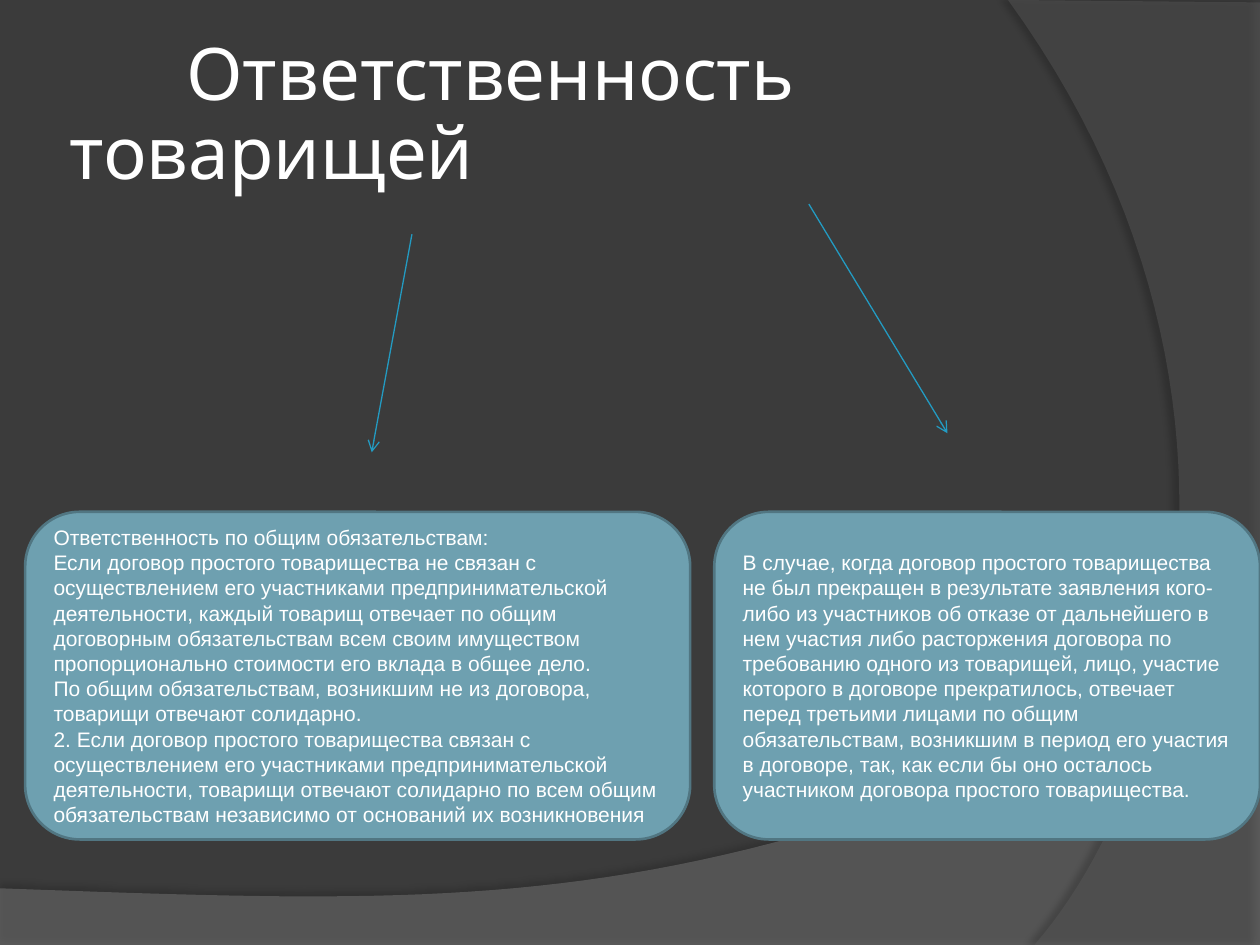
from dataclasses import dataclass

from lxml.etree import SubElement
from pptx import Presentation
from pptx.dml.color import RGBColor
from pptx.enum.shapes import MSO_CONNECTOR, MSO_SHAPE
from pptx.enum.text import MSO_ANCHOR, PP_ALIGN
from pptx.oxml.ns import qn
from pptx.util import Pt


@dataclass(frozen=True)
class Theme:
    background: str = "3B3B3B"
    bottom_wave: str = "7F7F7F"
    right_wave: str = "5E5E5E"
    shadow: str = "000000"
    card: str = "6EA0B0"
    card_border: str = "517682"
    arrow: str = "239BC2"
    text: str = "FFFFFF"
    title_font: str = "Karla"
    body_font: str = "Arial"
    title_size: float = 41.4
    body_size: float = 12


@dataclass(frozen=True)
class Box:
    left: float
    top: float
    width: float
    height: float

    def lengths(self):
        return Pt(self.left), Pt(self.top), Pt(self.width), Pt(self.height)


THEME = Theme()
CURVE_STEPS = 48

GENERAL_LIABILITY = [
    "Ответственность по общим обязательствам:",
    "Если договор простого товарищества не связан с осуществлением его участниками "
    "предпринимательской деятельности, каждый товарищ отвечает по общим договорным "
    "обязательствам всем своим имуществом пропорционально стоимости его вклада в общее дело.",
    "По общим обязательствам, возникшим не из договора, товарищи отвечают солидарно.",
    "2. Если договор простого товарищества связан с осуществлением его участниками "
    "предпринимательской деятельности, товарищи отвечают солидарно по всем общим "
    "обязательствам независимо от оснований их возникновения",
]
FORMER_PARTNER_LIABILITY = [
    "В случае, когда договор простого товарищества не был прекращен в результате заявления "
    "кого-либо из участников об отказе от дальнейшего в нем участия либо расторжения договора "
    "по требованию одного из товарищей, лицо, участие которого в договоре прекратилось, "
    "отвечает перед третьими лицами по общим обязательствам, возникшим в период его участия "
    "в договоре, так, как если бы оно осталось участником договора простого товарищества.",
]


def color(value):
    return RGBColor.from_string(value)


def curve_points(*controls):
    """Points along a cubic curve through four control points."""
    points = []
    for step in range(CURVE_STEPS + 1):
        t = step / CURVE_STEPS
        weights = ((1 - t) ** 3, 3 * t * (1 - t) ** 2, 3 * t**2 * (1 - t), t**3)
        points.append(tuple(
            sum(weight * control[axis] for weight, control in zip(weights, controls))
            for axis in (0, 1)
        ))
    return points


def set_alpha(color_element, percent):
    SubElement(color_element, qn("a:alpha"), val=str(percent * 1000))


def add_wave(slide, box, corners, curve, fill, opacity, shadow):
    points = [
        (Pt(box.left + x), Pt(box.top + y)) for x, y in corners + curve_points(*curve)
    ]
    builder = slide.shapes.build_freeform(*points[0])
    builder.add_line_segments(points[1:], close=True)
    shape = builder.convert_to_shape()
    shape.fill.solid()
    shape.fill.fore_color.rgb = color(fill)
    properties = shape.element.spPr
    set_alpha(properties.find(f"{qn('a:solidFill')}/{qn('a:srgbClr')}"), opacity)
    shape.line.fill.background()

    # Soft outer shadow
    shape.shadow.inherit = False
    shadow_opacity, blur, distance, direction = shadow
    outer = SubElement(
        properties.find(qn("a:effectLst")), qn("a:outerShdw"),
        blurRad=str(Pt(blur)), dist=str(Pt(distance)),
        dir=str(direction * 60000), rotWithShape="0",
    )
    set_alpha(SubElement(outer, qn("a:srgbClr"), val=THEME.shadow), shadow_opacity)


def add_backdrop(slide, box):
    slide.background.fill.solid()
    slide.background.fill.fore_color.rgb = color(THEME.background)

    # Wave along the bottom
    wave = Box(box.left, box.top + 374.4, box.width, 166.3)
    add_wave(
        slide, wave,
        [(0, 133.2), (0, wave.height), (wave.width, wave.height)],
        [(wave.width, 0), (402.5, 150.5), (281.5, 143.3), (0, 133.2)],
        THEME.bottom_wave, 45, (35, 4, 3.5, 270),
    )

    # Wave along the right edge
    wave = Box(box.left + 576, box.top, 144, box.height)
    add_wave(
        slide, wave,
        [(wave.width, 1.4), (wave.width, wave.height)],
        [(15.1, wave.height), (97.2, 445.7), (157, 216), (0, 0)],
        THEME.right_wave, 40, (45, 4, 4, 180),
    )


def add_title(slide, box):
    frame = slide.shapes.add_textbox(*box.lengths()).text_frame
    frame.word_wrap = True
    frame.vertical_anchor = MSO_ANCHOR.MIDDLE
    frame.margin_left = frame.margin_right = Pt(3.6)
    frame.margin_top = frame.margin_bottom = Pt(3.6)
    paragraph = frame.paragraphs[0]
    paragraph.text = "Ответственность товарищей"
    paragraph.line_spacing = 0.9
    paragraph.font.name = THEME.title_font
    paragraph.font.size = Pt(THEME.title_size)
    paragraph.font.color.rgb = color(THEME.text)
    # The first line starts further in than the second
    paragraph._p.get_or_add_pPr().set("indent", str(Pt(67)))


def add_card(slide, box, texts):
    shape = slide.shapes.add_shape(MSO_SHAPE.ROUNDED_RECTANGLE, *box.lengths())
    shape.shadow.inherit = False
    shape.fill.solid()
    shape.fill.fore_color.rgb = color(THEME.card)
    shape.line.color.rgb = color(THEME.card_border)
    shape.line.width = Pt(1.5)
    frame = shape.text_frame
    frame.word_wrap = True
    frame.vertical_anchor = MSO_ANCHOR.MIDDLE
    for index, text in enumerate(texts):
        paragraph = frame.add_paragraph() if index else frame.paragraphs[0]
        paragraph.text = text
        paragraph.alignment = PP_ALIGN.LEFT
        paragraph.font.name = THEME.body_font
        paragraph.font.size = Pt(THEME.body_size)
        paragraph.font.color.rgb = color(THEME.text)


def add_arrow(slide, box):
    """Arrow across the box; a negative width points it to the left."""
    connector = slide.shapes.add_connector(
        MSO_CONNECTOR.STRAIGHT, Pt(box.left), Pt(box.top),
        Pt(box.left + box.width), Pt(box.top + box.height),
    )
    connector.line.color.rgb = color(THEME.arrow)
    connector.line.width = Pt(0.75)
    SubElement(connector.line._get_or_add_ln(), qn("a:tailEnd"), type="arrow")
    SubElement(connector.element.spPr, qn("a:effectLst"))


def main():
    presentation = Presentation()
    presentation.slide_width, presentation.slide_height = Pt(720), Pt(540)
    slide = presentation.slides.add_slide(presentation.slide_layouts[6])

    add_backdrop(slide, Box(0, 0, 720, 540))
    add_title(slide, Box(36, 21.6, 588.2, 90))

    # Two kinds of liability
    add_card(slide, Box(14.4, 292.5, 380, 187.2), GENERAL_LIABILITY)
    add_card(slide, Box(408.2, 292.5, 311.8, 187.2), FORMER_PARTNER_LIABILITY)

    # Arrows from the title to the cards
    add_arrow(slide, Box(235.4, 133.9, -23, 124.6))
    add_arrow(slide, Box(462.2, 116.6, 79.2, 131))

    presentation.save("out.pptx")


if __name__ == "__main__":
    main()
